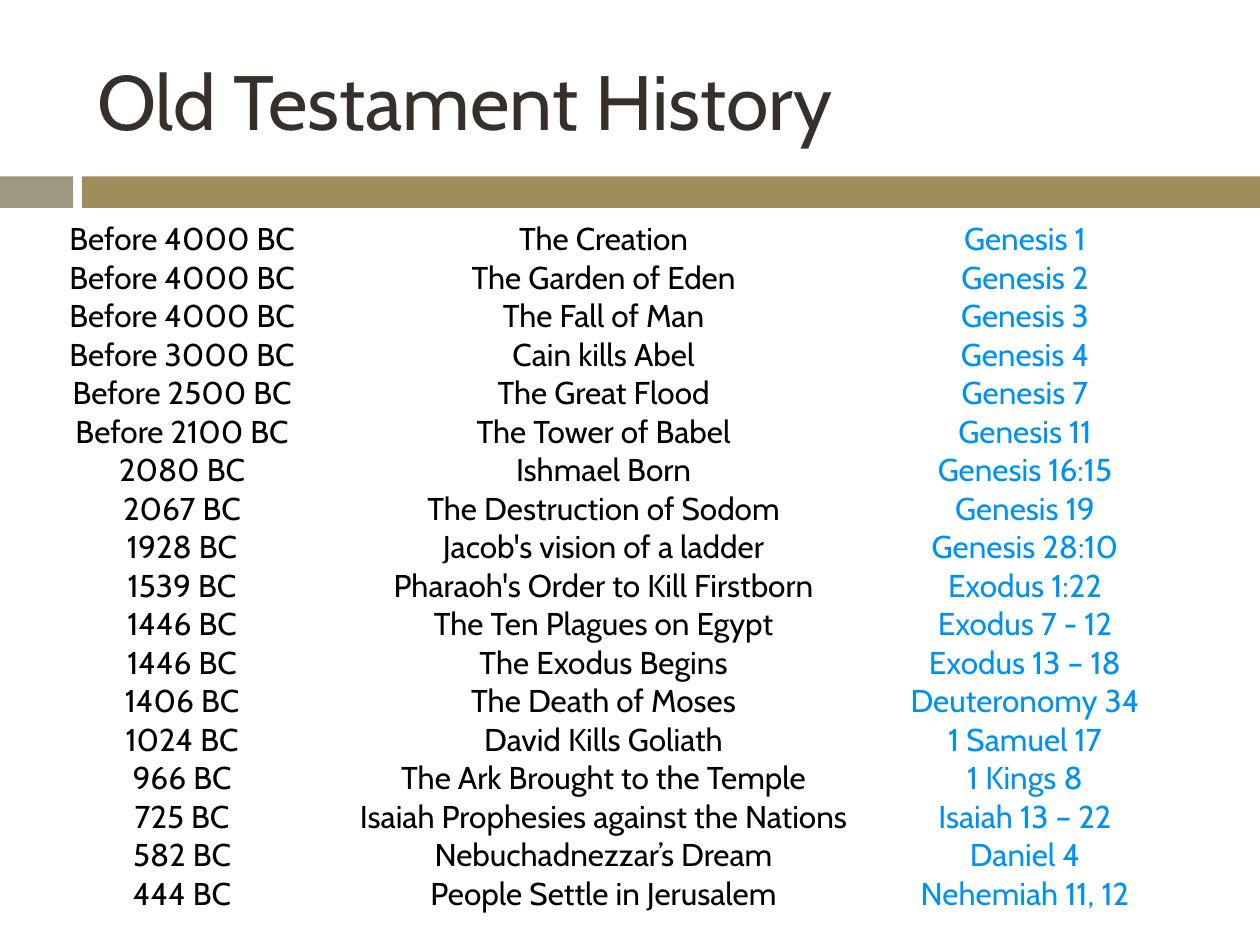
from pptx import Presentation
from pptx import util as u
from pptx.dml.color import RGBColor
from pptx.enum import shapes, text

FONT = "Cabin"
WHITE = RGBColor(0xFF, 0xFF, 0xFF)
BLACK = RGBColor(0, 0, 0)
BROWN = RGBColor(0x37, 0x30, 0x2A)
GREY = RGBColor(0xA0, 0x97, 0x81)
OLIVE = RGBColor(0x9E, 0x8E, 0x5C)
BLUE = RGBColor(0x00, 0x92, 0xF2)

EVENTS = [
    ("Before 4000 BC", "The Creation", "Genesis 1"),
    ("Before 4000 BC", "The Garden of Eden", "Genesis 2"),
    ("Before 4000 BC", "The Fall of Man", "Genesis 3"),
    ("Before 3000 BC", "Cain kills Abel", "Genesis 4"),
    ("Before 2500 BC", "The Great Flood", "Genesis 7"),
    ("Before 2100 BC", "The Tower of Babel", "Genesis 11"),
    ("2080 BC", "Ishmael Born", "Genesis 16:15"),
    ("2067 BC", "The Destruction of Sodom", "Genesis 19"),
    ("1928 BC", "Jacob's vision of a ladder", "Genesis 28:10"),
    ("1539 BC", "Pharaoh's Order to Kill Firstborn", "Exodus 1:22"),
    ("1446 BC", "The Ten Plagues on Egypt", "Exodus 7 - 12"),
    ("1446 BC", "The Exodus Begins", "Exodus 13 – 18"),
    ("1406 BC", "The Death of Moses", "Deuteronomy 34"),
    ("1024 BC", "David Kills Goliath", "1 Samuel 17"),
    ("966 BC", "The Ark Brought to the Temple", "1 Kings 8"),
    ("725 BC", "Isaiah Prophesies against the Nations", "Isaiah 13 – 22"),
    ("582 BC", "Nebuchadnezzar’s Dream", "Daniel 4"),
    ("444 BC", "People Settle in Jerusalem", "Nehemiah 11, 12"),
]


def set_font(paragraph, size, color):
    paragraph.font.name = FONT
    paragraph.font.size = u.Pt(size)
    paragraph.font.color.rgb = color


deck = Presentation()
deck.slide_width, deck.slide_height = u.Inches(10), u.Inches(7.5)
page = deck.slides.add_slide(deck.slide_layouts[5])

for left, right, color in [(0, 0.58, GREY), (0.65, 10, OLIVE)]:
    bar = page.shapes.add_shape(
        shapes.MSO_SHAPE.RECTANGLE,
        u.Inches(left), u.Inches(1.4), u.Inches(right - left), u.Inches(0.25))
    bar.shadow.inherit = False
    bar.fill.solid()
    bar.fill.fore_color.rgb = color
    bar.line.fill.background()

title = page.shapes.title
title.left, title.top = u.Inches(0.67), u.Inches(0.25)
title.width, title.height = u.Inches(8.92), u.Inches(1.08)
title.text_frame.text = "Old Testament History"
title.text_frame.vertical_anchor = text.MSO_ANCHOR.MIDDLE
heading = title.text_frame.paragraphs[0]
heading.alignment = text.PP_ALIGN.LEFT
set_font(heading, 44, BROWN)

column = u.Inches(2.23)
row_height = u.Inches(0.3)
table = page.shapes.add_table(
    len(EVENTS), 3, u.Inches(0.33), u.Inches(1.75),
    column * 4, row_height * len(EVENTS)).table
table.first_row = table.horz_banding = False
for index, share in enumerate([1, 2, 1]):
    table.columns[index].width = column * share

for row, event in enumerate(EVENTS):
    table.rows[row].height = row_height
    for index, (words, color) in enumerate(zip(event, [BLACK, BLACK, BLUE])):
        cell = table.cell(row, index)
        cell.fill.solid()
        cell.fill.fore_color.rgb = WHITE
        cell.margin_left = cell.margin_right = 0
        cell.margin_top = cell.margin_bottom = 0
        cell.text = words
        para = cell.text_frame.paragraphs[0]
        para.alignment = text.PP_ALIGN.CENTER
        set_font(para, 18, color)

deck.save("out.pptx")
